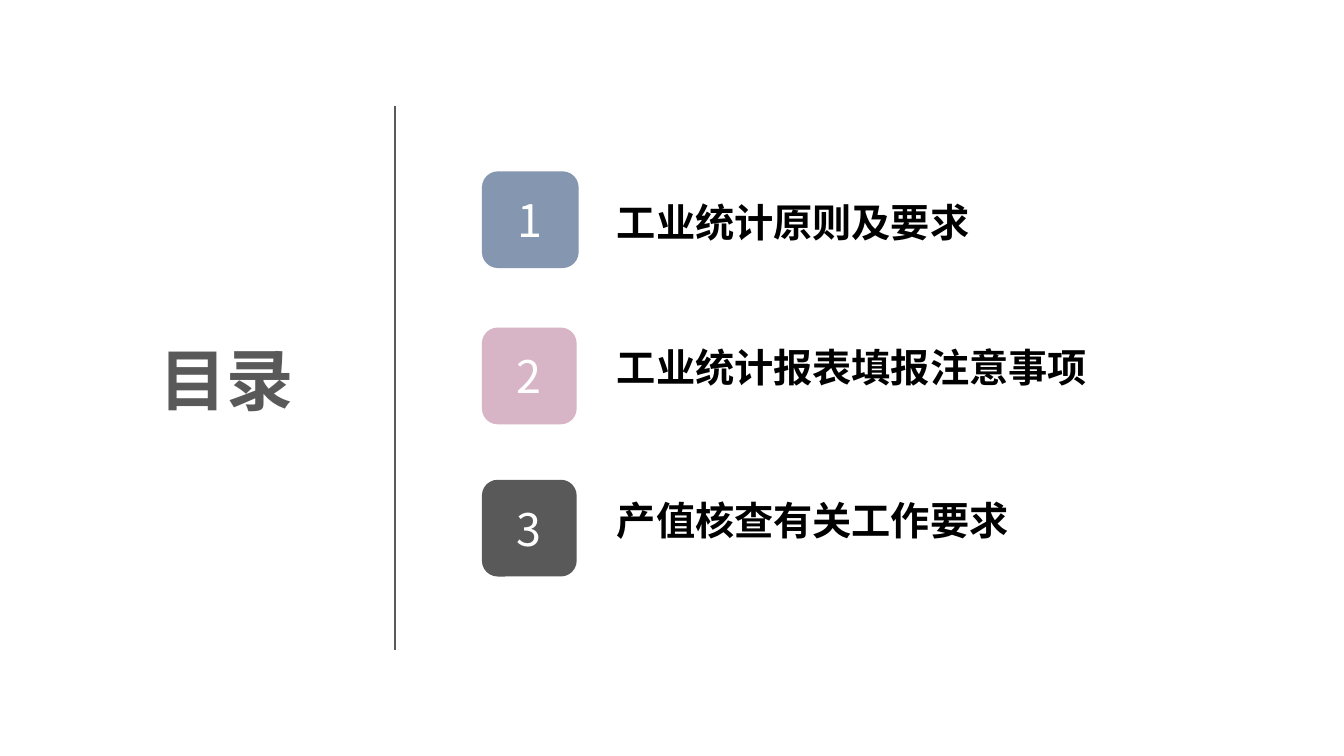
from pptx import Presentation
from pptx.dml.color import RGBColor
from pptx.enum.shapes import MSO_CONNECTOR, MSO_SHAPE
from pptx.enum.text import MSO_ANCHOR, PP_ALIGN
from pptx.oxml.ns import qn
from pptx.util import Emu, Pt

STRAIGHT = MSO_CONNECTOR.STRAIGHT
ROUNDED = MSO_SHAPE.ROUNDED_RECTANGLE
LEFT, CENTER = PP_ALIGN.LEFT, PP_ALIGN.CENTER
MIDDLE, BOTTOM = MSO_ANCHOR.MIDDLE, MSO_ANCHOR.BOTTOM

EMU_PER_PX = 9144  # 100 px to the inch
TITLE_ONLY = 5
CJK_FONT = "Noto Sans CJK SC"
LATIN_FONT = "Arial"
GRAY = "595959"

# number, heading, tile colour, tile box, heading box relative to the tile
CHAPTERS = [
    ("1", "工业统计原则及要求", "8496B0", (478, 170, 96, 96), (124, 38, 459, 40)),
    ("2", "工业统计报表填报注意事项", "D7B5C6", (478, 325, 94, 96), (124, 27, 591, 40)),
    ("3", "产值核查有关工作要求", GRAY, (478, 476, 94, 96), (124, 28, 591, 40)),
]


def px(*lengths):
    return [Emu(length * EMU_PER_PX) for length in lengths]


def color(hex_code):
    return RGBColor.from_string(hex_code)


def write(shape, words, size, font, hex_code, bold, align, anchor):
    frame = shape.text_frame
    frame.word_wrap = True
    frame.vertical_anchor = anchor
    paragraph = frame.paragraphs[0]
    paragraph.alignment = align
    run = paragraph.add_run()
    run.text = words
    run.font.size = Pt(size)
    run.font.bold = bold
    run.font.name = font
    run.font.color.rgb = color(hex_code)
    east_asian = run.font._element.makeelement(qn("a:ea"), {"typeface": CJK_FONT})
    run.font._element.find(qn("a:latin")).addnext(east_asian)


def add_heading(slide, box):
    heading = slide.shapes.title
    heading.left, heading.top, heading.width, heading.height = px(*box)
    write(heading, "目录", 48, CJK_FONT, GRAY, True, CENTER, MIDDLE)


def add_divider(slide, x, top, bottom):
    divider = slide.shapes.add_connector(STRAIGHT, *px(x, top, x, bottom))
    divider.line.color.rgb = color(GRAY)
    divider.line.width = Pt(1.25)
    properties = divider._element.spPr
    properties.append(properties.makeelement(qn("a:effectLst"), {}))


def add_chapter(slide, number, heading, fill, tile_box, heading_box):
    """Group a numbered tile with its heading, placed from the tile's corner."""
    chapter = slide.shapes.add_group_shape().shapes

    tile = chapter.add_shape(ROUNDED, *px(*tile_box))
    tile.shadow.inherit = False
    tile.fill.solid()
    tile.fill.fore_color.rgb = color(fill)
    tile.line.fill.background()
    write(tile, number, 32, CJK_FONT, "FFFFFF", False, CENTER, MIDDLE)

    dx, dy, width, height = heading_box
    label = chapter.add_textbox(*px(tile_box[0] + dx, tile_box[1] + dy, width, height))
    write(label, heading, 28, LATIN_FONT, "000000", True, LEFT, BOTTOM)


def main():
    deck = Presentation()
    deck.slide_width, deck.slide_height = px(1333, 750)
    contents = deck.slides.add_slide(deck.slide_layouts[TITLE_ONLY])
    add_divider(contents, 392, 105, 645)
    add_heading(contents, (58, 330, 333, 91))
    for chapter in CHAPTERS:
        add_chapter(contents, *chapter)
    deck.save("out.pptx")


if __name__ == "__main__":
    main()
